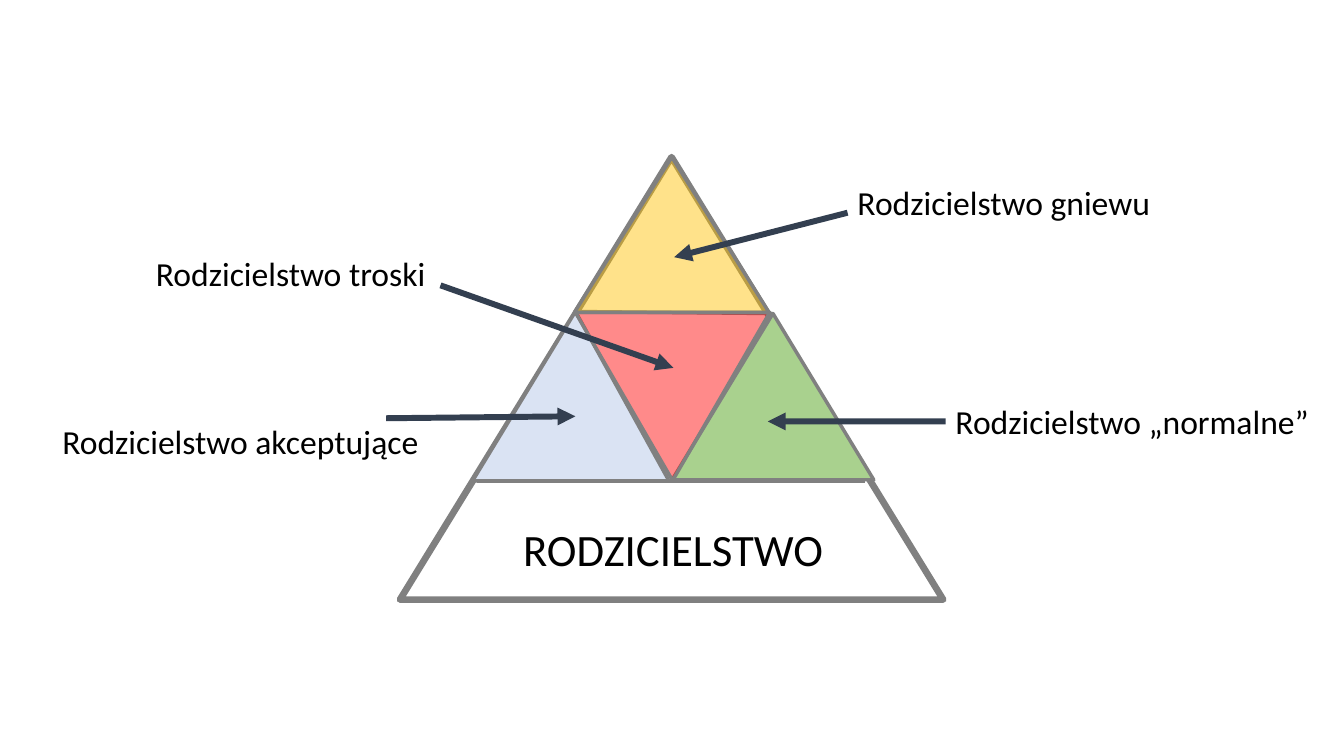
"""Build a slide with a pyramid of four kinds of parenthood."""
from lxml.etree import SubElement
from pptx import Presentation
from pptx.dml.color import RGBColor
from pptx.enum.shapes import MSO_CONNECTOR, MSO_SHAPE
from pptx.enum.text import MSO_AUTO_SIZE, PP_ALIGN
from pptx.oxml.ns import qn
from pptx.util import Cm, Pt

GRAY, NAVY, BLACK = "808080", "333F50", "000000"
FRAME = (10.08, 3.96, 13.69, 11.15)
RULES = [(12.01, 12.14, 21.79, 12.14, 2.25), (14.5, 7.85, 19.46, 7.9, 2.5)]
PARTS = [
    ((11.91, 7.85, 4.95, 4.27), "DAE3F3", 100, 0.524, 0),
    ((16.94, 7.9, 5.08, 4.19), "A9D18E", 100, 0.5, 0),
    ((14.5, 7.87, 4.9, 4.24), "FF0000", 46, 0.5, 180),
    ((14.48, 3.96, 4.9, 3.91), "FFC000", 46, 0.5, 0),
]
BASE = ("RODZICIELSTWO ", (11.33, 13.03, 11.53, 1.63))
LABELS = [
    ("Rodzicielstwo troski", (3.68, 6.25, 8.59, 2.31), (11.1, 7.19, 16.97, 9.27), None),
    ("Rodzicielstwo akceptujące", (1.32, 10.49, 9.98, 2.31), (9.73, 10.54, 14.5, 10.49), None),
    ("Rodzicielstwo „normalne”", (23.83, 9.98, 9.78, 1.28), (23.83, 10.62, 19.35, 10.62), 1),
    ("Rodzicielstwo gniewu", (21.36, 4.45, 8.43, 1.28), (21.36, 5.36, 16.99, 6.48), None),
]


def color(text):
    return RGBColor.from_string(text)


def place(box):
    return [Cm(n) for n in box]


def add_part(box, fill=None, alpha=100, peak=0.5, turn=0, width=2.5):
    part = shapes.add_shape(MSO_SHAPE.ISOSCELES_TRIANGLE, *place(box))
    part.shadow.inherit = False
    part.adjustments[0] = peak
    part.rotation = turn
    part.line.color.rgb = color(GRAY)
    part.line.width = Pt(width)
    if not fill:
        part.fill.background()
        return
    part.fill.solid()
    part.fill.fore_color.rgb = color(fill)
    if alpha < 100:
        tone = part.fill._xPr.find(qn("a:solidFill"))[0]
        SubElement(tone, qn("a:alpha"), val=str(alpha * 1000))


def add_line(ends, tint, width, arrow=False):
    line = shapes.add_connector(MSO_CONNECTOR.STRAIGHT, *place(ends))
    line.line.color.rgb = color(tint)
    line.line.width = Pt(width)
    if arrow:
        SubElement(line.line._get_or_add_ln(), qn("a:tailEnd"), type="triangle")
    SubElement(line._element.spPr, qn("a:effectLst"))
    return line


def add_text(text, box, size, align=PP_ALIGN.LEFT):
    label = shapes.add_textbox(*place(box))
    frame = label.text_frame
    frame.word_wrap = True
    frame.auto_size = MSO_AUTO_SIZE.SHAPE_TO_FIT_TEXT
    frame.text = text
    line = frame.paragraphs[0]
    line.alignment = align
    line.font.name = "Calibri"
    line.font.size = Pt(size)
    line.font.color.rgb = color(BLACK)
    return label


deck = Presentation()
deck.slide_width, deck.slide_height = Cm(33.87), Cm(19.05)
shapes = deck.slides.add_slide(deck.slide_layouts[6]).shapes

add_part(FRAME, width=4.75)
for *ends, width in RULES:
    add_line(ends, GRAY, width)
for part in PARTS:
    add_part(*part)
for text, box, ends, side in LABELS:
    label = add_text(text, box, 24)
    arrow = add_line(ends, NAVY, 4.25, arrow=True)
    if side is not None:
        arrow.begin_connect(label, side)
add_text(*BASE, 32, PP_ALIGN.CENTER)

deck.save("out.pptx")
